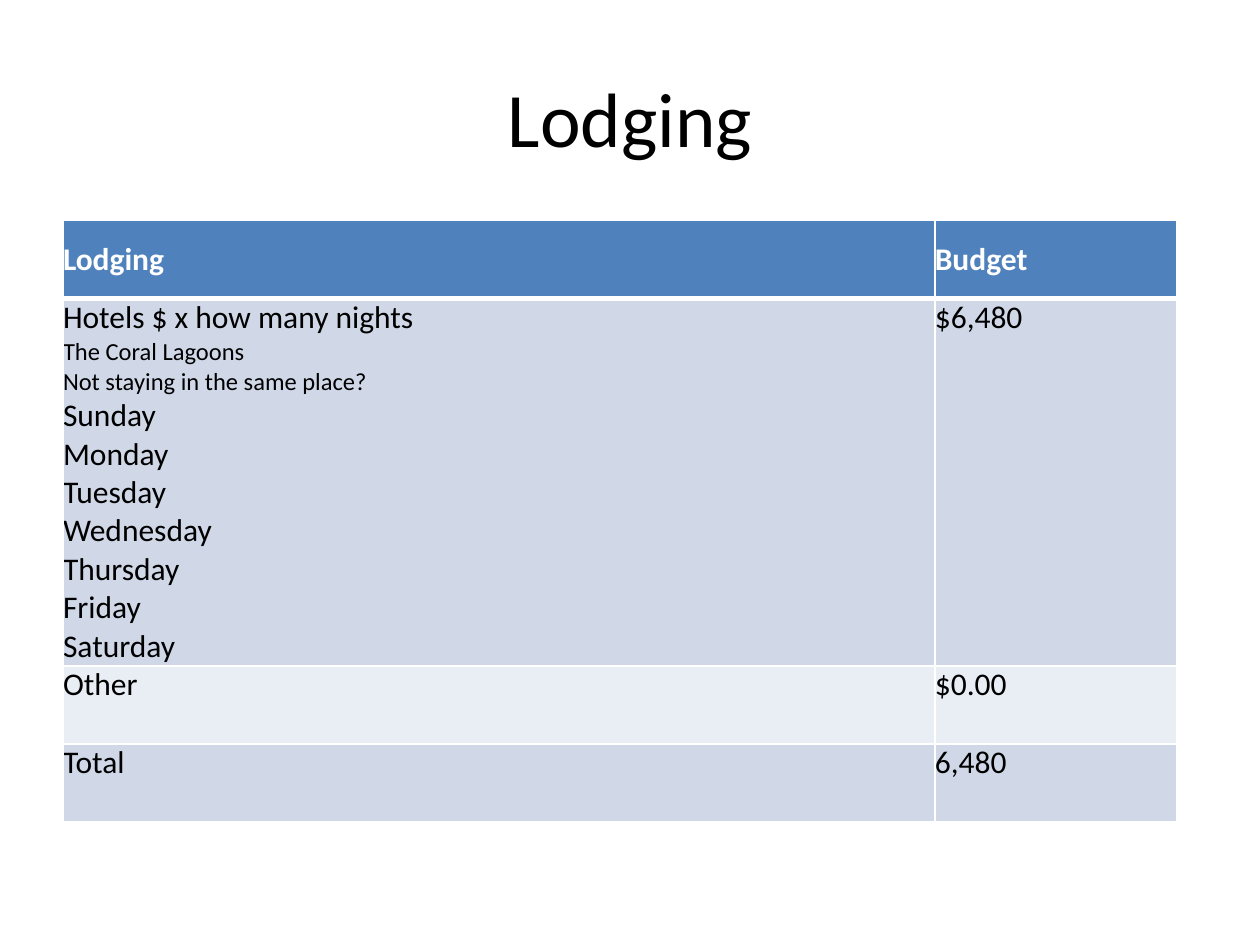
from lxml.etree import SubElement
from pptx import Presentation
from pptx.dml.color import RGBColor
from pptx.enum.text import MSO_ANCHOR, PP_ALIGN
from pptx.oxml import parse_xml
from pptx.oxml.ns import nsdecls, qn
from pptx.util import Inches, Pt

DAYS = ["Sunday", "Monday", "Tuesday", "Wednesday", "Thursday", "Friday", "Saturday"]
HOTEL_LINES = (
    [("Hotels $ x how many nights", 18),
     ("The Coral Lagoons", 14),
     ("Not staying in the same place?", 14)]
    + [(day, 18) for day in DAYS]
)
ROWS = [
    ([("Lodging", 18)], [("Budget", 18)]),
    (HOTEL_LINES, [("$6,480", 18)]),
    ([("Other", 18)], [("$0.00", 18)]),
    ([("Total", 18)], [("6,480", 18)]),
]
COL_WIDTHS = [6.92, 1.92]
ROW_HEIGHTS = [0.62, 2.9, 0.62, 0.62]
BANDS = ["E9EDF4", "D0D8E8"]
CELL_FORMAT = {"margin_left": 0, "margin_top": 0, "margin_right": 0, "margin_bottom": 0}


def rgb(color):
    """Return the colour for a hex string."""
    return RGBColor.from_string(color)


def add_run(p, text, size, color, bold=False):
    """Add a formatted run to a paragraph."""
    r = p.add_run()
    r.text = text
    for name, value in {"name": "Calibri", "size": Pt(size), "bold": bold}.items():
        setattr(r.font, name, value)
    r.font.color.rgb = rgb(color)


def set_borders(cell, color, widths):
    """Draw the cell's sides with widths in points, keyed by L, R, T and B."""
    tc_pr = cell._tc.get_or_add_tcPr()
    for i, (side, width) in enumerate(widths.items()):
        ln = parse_xml(f'<a:ln{side} {nsdecls("a")} w="{Pt(width)}"/>')
        fill = SubElement(ln, qn("a:solidFill"))
        SubElement(fill, qn("a:srgbClr"), val=color)
        tc_pr.insert(i, ln)


def fill_cell(cell, lines, row):
    """Write and format one table cell."""
    header = row == 0
    for name, value in CELL_FORMAT.items():
        setattr(cell, name, value)
    cell.vertical_anchor = MSO_ANCHOR.MIDDLE if header else MSO_ANCHOR.TOP
    cell.fill.solid()
    cell.fill.fore_color.rgb = rgb("4F81BD" if header else BANDS[row % 2])
    tf = cell.text_frame
    for i, (text, size) in enumerate(lines):
        p = tf.add_paragraph() if i else tf.paragraphs[0]
        add_run(p, text, size, "FFFFFF" if header else "000000", header)
    set_borders(cell, "FFFFFF",
                {"L": 1, "R": 1, "T": 3 if row == 1 else 1, "B": 3 if header else 1})


def add_title(s, text, left, top, width, height):
    """Place and format the slide title."""
    sp = s.shapes.title
    box = {"left": left, "top": top, "width": width, "height": height}
    for name, value in box.items():
        setattr(sp, name, Inches(value))
    tf = sp.text_frame
    tf.vertical_anchor = MSO_ANCHOR.MIDDLE
    p = tf.paragraphs[0]
    p.alignment = PP_ALIGN.CENTER
    add_run(p, text, 44, "000000")


def add_budget_table(s, left, top, width, height):
    """Build the lodging budget table."""
    table = s.shapes.add_table(len(ROWS), len(COL_WIDTHS), Inches(left), Inches(top),
                               Inches(width), Inches(height)).table
    for column, col_width in zip(table.columns, COL_WIDTHS):
        column.width = Inches(col_width)
    for i, (row_height, row) in enumerate(zip(ROW_HEIGHTS, ROWS)):
        table.rows[i].height = Inches(row_height)
        for j, lines in enumerate(row):
            fill_cell(table.cell(i, j), lines, i)


def main():
    """Build and save the slide."""
    prs = Presentation()
    prs.slide_width, prs.slide_height = Inches(10), Inches(7.5)
    s = prs.slides.add_slide(prs.slide_layouts[5])
    add_title(s, "Lodging", 0.5, 0.3, 9, 1.25)
    add_budget_table(s, 0.5, 1.75, sum(COL_WIDTHS), sum(ROW_HEIGHTS))
    prs.save("out.pptx")


if __name__ == "__main__":
    main()
